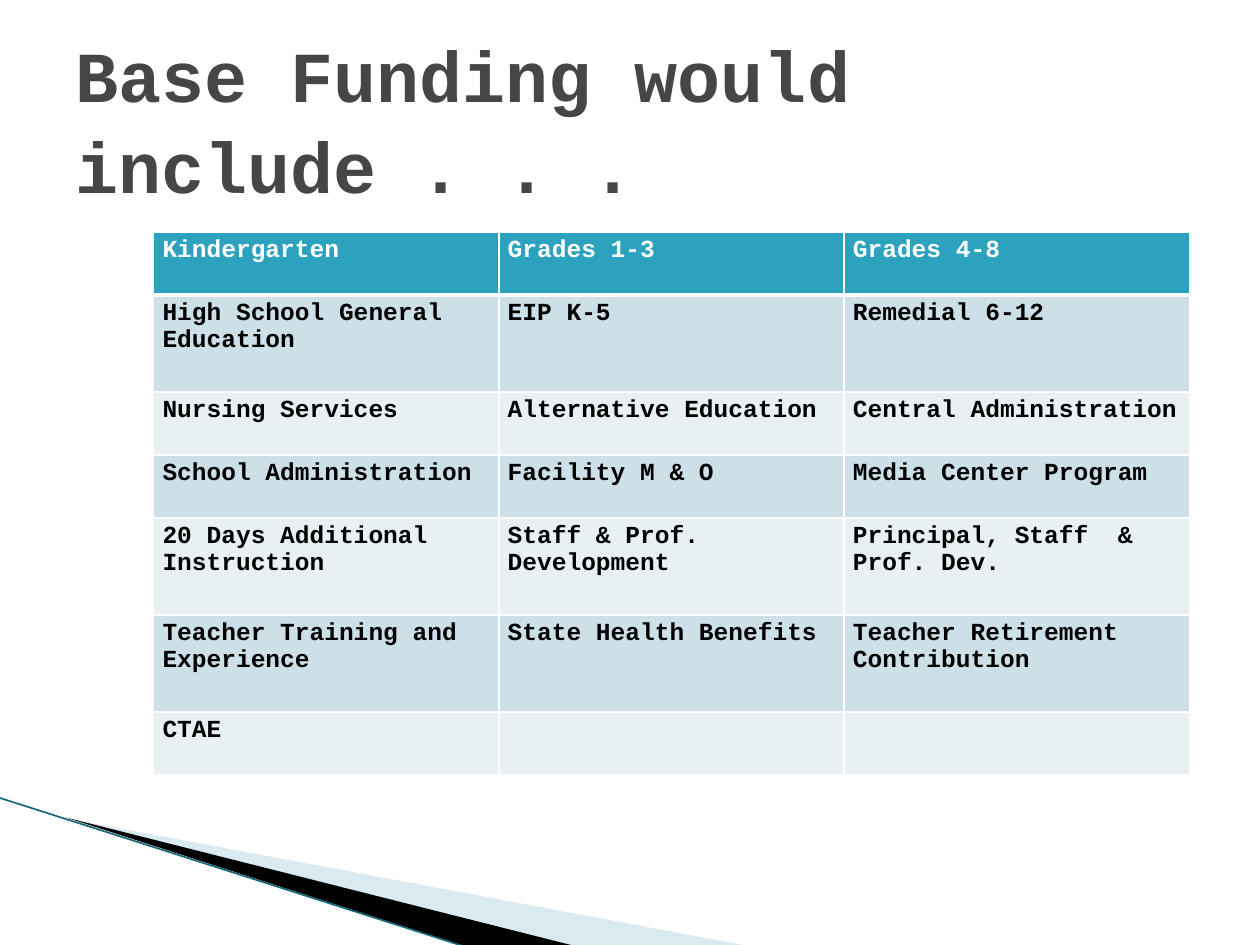
from lxml.etree import SubElement
from pptx import Presentation
from pptx.dml.color import RGBColor
from pptx.enum.shapes import MSO_CONNECTOR
from pptx.enum.text import MSO_ANCHOR
from pptx.oxml.ns import qn
from pptx.util import Inches, Pt

FONT = "Courier New"
WHITE = "FFFFFF"
BLACK = "000000"
HEADER_FILL = "2DA2BF"
BAND_FILLS = ["CDE0E8", "E8F0F4"]
COLUMN_WIDTH = 2.74
ROW_HEIGHTS = [0.5, 0.77, 0.5, 0.5, 0.77, 0.77, 0.5]
FUNDING_ITEMS = [
    ["Kindergarten", "Grades 1-3", "Grades 4-8"],
    ["High School General Education", "EIP K-5", "Remedial 6-12"],
    ["Nursing Services", "Alternative Education", "Central Administration"],
    ["School Administration", "Facility M & O", "Media Center Program"],
    ["20 Days Additional Instruction", "Staff & Prof. Development",
     "Principal, Staff  & Prof. Dev."],
    ["Teacher Training and Experience", "State Health Benefits",
     "Teacher Retirement Contribution"],
    ["CTAE", "", ""],
]


def color(value):
    return RGBColor.from_string(value)


def set_fill(target, value):
    target.fill.solid()
    target.fill.fore_color.rgb = color(value)


def add_run(paragraph, text, size, value):
    run = paragraph.add_run()
    run.text = text
    run.font.name = FONT
    run.font.size = Pt(size)
    run.font.bold = True
    run.font.color.rgb = color(value)


def add_wedge(slide, points, fill, opacity=100):
    corners = [(Inches(x), Inches(y)) for x, y in points]
    builder = slide.shapes.build_freeform(*corners[0], scale=1.0)
    builder.add_line_segments(corners[1:], close=True)
    shape = builder.convert_to_shape()
    shape.shadow.inherit = False
    shape.line.fill.background()
    set_fill(shape, fill)
    if opacity < 100:
        fill_color = shape._element.spPr.find(qn("a:solidFill"))[0]
        SubElement(fill_color, qn("a:alpha"), val=str(opacity * 1000))


def add_edge_line(slide, start, end, value, width):
    x1, y1, x2, y2 = [Inches(length) for length in (*start, *end)]
    line = slide.shapes.add_connector(MSO_CONNECTOR.STRAIGHT, x1, y1, x2, y2)
    line.line.color.rgb = color(value)
    line.line.width = Pt(width)
    SubElement(line._element.spPr, qn("a:effectLst"))


def add_title(slide, text):
    shape = slide.shapes.add_textbox(
        Inches(0.5), Inches(0.3), Inches(9), Inches(1.25))
    frame = shape.text_frame
    frame.word_wrap = True
    frame.vertical_anchor = MSO_ANCHOR.MIDDLE
    paragraph = frame.paragraphs[0]
    paragraph.line_spacing = 1.06
    add_run(paragraph, text, 41, "464646")


def set_borders(cell, bottom_width):
    properties = cell._tc.get_or_add_tcPr()
    widths = {"a:lnL": 1, "a:lnR": 1, "a:lnT": 1, "a:lnB": bottom_width}
    for index, (side, width) in enumerate(widths.items()):
        border = SubElement(properties, qn(side), w=str(Pt(width)))
        fill = SubElement(border, qn("a:solidFill"))
        SubElement(fill, qn("a:srgbClr"), val=WHITE)
        properties.insert(index, border)


def style_cell(cell, text, is_header, fill):
    cell.margin_left = cell.margin_right = Inches(0.07)
    cell.margin_top = cell.margin_bottom = Inches(0.04)
    set_fill(cell, fill)
    set_borders(cell, 3 if is_header else 1)
    if text:
        paragraph = cell.text_frame.paragraphs[0]
        add_run(paragraph, text, 14, WHITE if is_header else BLACK)


def add_funding_table(slide, rows):
    column_count = len(rows[0])
    table = slide.shapes.add_table(
        len(rows), column_count, Inches(1.22), Inches(1.84),
        Inches(COLUMN_WIDTH * column_count), Inches(sum(ROW_HEIGHTS))).table
    for column in table.columns:
        column.width = Inches(COLUMN_WIDTH)
    for index, texts in enumerate(rows):
        table.rows[index].height = Inches(ROW_HEIGHTS[index])
        fill = BAND_FILLS[(index - 1) % 2] if index else HEADER_FILL
        for cell, text in zip(table.rows[index].cells, texts):
            style_cell(cell, text, index == 0, fill)


def main():
    presentation = Presentation()
    presentation.slide_width = Inches(10)
    presentation.slide_height = Inches(7.5)
    slide = presentation.slides.add_slide(presentation.slide_layouts[6])
    add_wedge(slide, [(0.55, 6.5), (5.95, 7.51), (4.56, 7.51)], "A0CBDC", 40)
    add_wedge(slide, [(0.53, 6.49), (4.57, 7.51), (3.72, 7.52)], BLACK)
    add_edge_line(slide, (-0.01, 6.33), (3.71, 7.52), "16697A", 0.95)
    add_title(slide, "Base Funding would include . . .")
    add_funding_table(slide, FUNDING_ITEMS)
    presentation.save("out.pptx")


if __name__ == "__main__":
    main()
